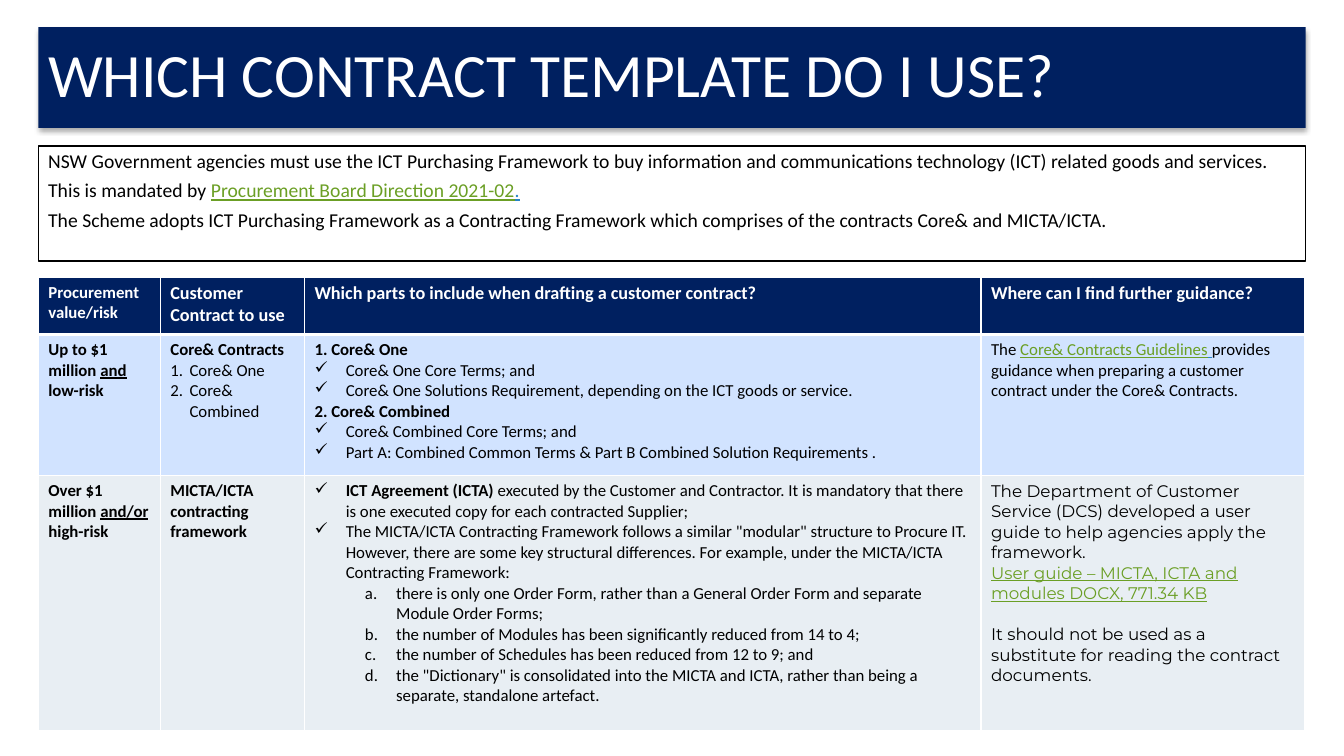
from dataclasses import dataclass

from lxml.etree import SubElement
from pptx import Presentation
from pptx.dml.color import RGBColor
from pptx.enum.shapes import MSO_SHAPE
from pptx.enum.text import MSO_ANCHOR, PP_ALIGN
from pptx.oxml.ns import qn
from pptx.util import Inches, Pt

NAVY = RGBColor(0x00, 0x20, 0x60)
WHITE = RGBColor(0xFF, 0xFF, 0xFF)
BLACK = RGBColor(0x00, 0x00, 0x00)
GREEN = RGBColor(0x6B, 0x9F, 0x25)
BLUE = RGBColor(0x26, 0x83, 0xC6)
PALE_BLUE = RGBColor(0xD1, 0xE3, 0xFF)
PALE_GREY = RGBColor(0xE8, 0xEE, 0xF3)

LINK = dict(color=GREEN, underline=True)


@dataclass
class Line:
    runs: list
    bullet: tuple = ()
    left: float = 0
    hanging: float = 0
    before: float = 0


def plain(text, **style):
    return Line([(text, style)])


def check(*runs):
    return Line(list(runs), ("a:buChar", "char", "✓"), 0.31, 0.31)


def numbered(text):
    return Line([(text, {})], ("a:buAutoNum", "type", "arabicPeriod"), 0.19, 0.19)


def lettered(text):
    return Line([(text, {})], ("a:buAutoNum", "type", "alphaLcPeriod"), 0.81, 0.31)


def write(paragraph, text, size=12, color=BLACK, font="Calibri", bold=False, underline=False):
    run = paragraph.add_run()
    run.text = text
    run.font.name = font
    run.font.size = Pt(size)
    run.font.bold = bold
    run.font.underline = underline
    run.font.color.rgb = color


class ContractSlide:
    def __init__(self, deck):
        self.slide = deck.slides.add_slide(deck.slide_layouts[6])
        self.left = Inches(0.38)
        self.width = Inches(12.57)

    def fill_text(self, frame, lines, spacing=1.0, **base):
        frame.word_wrap = True
        for index, line in enumerate(lines):
            paragraph = frame.add_paragraph() if index else frame.paragraphs[0]
            paragraph.alignment = PP_ALIGN.LEFT
            paragraph.line_spacing = spacing
            paragraph.space_before = Pt(line.before)
            if line.bullet:
                tag, attribute, value = line.bullet
                properties = paragraph._p.get_or_add_pPr()
                properties.set("marL", str(Inches(line.left)))
                properties.set("indent", str(-Inches(line.hanging)))
                SubElement(properties, qn(tag)).set(attribute, value)
            for text, style in line.runs:
                write(paragraph, text, **{**base, **style})

    def panel(self, top, height, fill, lines, outline=None, anchor=MSO_ANCHOR.TOP, **base):
        box = self.slide.shapes.add_shape(
            MSO_SHAPE.RECTANGLE, self.left, Inches(top), self.width, Inches(height))
        box.shadow.inherit = False
        box.fill.solid()
        box.fill.fore_color.rgb = fill
        if outline is None:
            box.line.fill.background()
        else:
            box.line.color.rgb = outline
            box.line.width = Pt(1)
        box.text_frame.vertical_anchor = anchor
        self.fill_text(box.text_frame, lines, spacing=0.9, **base)
        return box

    def drop_shadow(self, box):
        effects = box._element.spPr.find(qn("a:effectLst"))
        shadow = SubElement(effects, qn("a:outerShdw"), blurRad=str(Pt(3.5)),
                            dist=str(Pt(2.2)), dir="5400000", algn="t", rotWithShape="0")
        color = SubElement(shadow, qn("a:srgbClr"), val=str(BLACK))
        SubElement(color, qn("a:alpha"), val="32000")

    def border(self, cell, side, points):
        edge = SubElement(cell._tc.get_or_add_tcPr(), qn(f"a:ln{side}"), w=str(Pt(points)))
        paint = SubElement(edge, qn("a:solidFill"))
        SubElement(paint, qn("a:srgbClr"), val=str(WHITE))

    def table(self, top, widths, heights, fills, rows):
        grid = self.slide.shapes.add_table(
            len(heights), len(widths), self.left, Inches(top),
            self.width, Inches(sum(heights))).table
        grid.horz_banding = False
        for column, width in zip(grid.columns, widths):
            column.width = Inches(width)
        for row, height in zip(grid.rows, heights):
            row.height = Inches(height)
        for row_index, (fill, row) in enumerate(zip(fills, rows)):
            for column_index, lines in enumerate(row):
                cell = grid.cell(row_index, column_index)
                for side in "LRTB":
                    under_header = (row_index, side) in ((0, "B"), (1, "T"))
                    self.border(cell, side, 3 if under_header else 1)
                cell.fill.solid()
                cell.fill.fore_color.rgb = fill
                self.fill_text(cell.text_frame, lines)


def main():
    deck = Presentation()
    deck.slide_width = Inches(13.33)
    deck.slide_height = Inches(7.5)
    page = ContractSlide(deck)

    title = page.panel(0.27, 1, NAVY, [plain("WHICH CONTRACT TEMPLATE DO I USE?")],
                       anchor=MSO_ANCHOR.MIDDLE, size=44, color=WHITE)
    page.drop_shadow(title)

    page.panel(1.45, 1.14, WHITE, [
        plain("NSW Government agencies must use the ICT Purchasing Framework to buy information "
              "and communications technology (ICT) related goods and services."),
        Line([("This is mandated by ", {}),
              ("Procurement Board Direction 2021-02", LINK),
              (".", dict(color=BLUE, underline=True))], before=6),
        Line([("The Scheme adopts ICT Purchasing Framework as a Contracting Framework which "
               "comprises of the contracts Core& and MICTA/ICTA.", {})], before=6),
    ], outline=BLACK, size=14)

    bold = dict(bold=True)
    bold_underlined = dict(bold=True, underline=True)
    heading = dict(size=13, color=WHITE, bold=True)
    montserrat = dict(font="Montserrat")

    headings = [
        [plain("Procurement value/risk", **{**heading, "size": 12})],
        [plain("Customer Contract to use", **heading)],
        [plain("Which parts to include when drafting a customer contract?", **heading)],
        [plain("Where can I find further guidance?", **heading)],
    ]
    low_risk = [
        [Line([("Up to $1 million ", bold), ("and", bold_underlined), (" low-risk", bold)])],
        [plain("Core& Contracts", **bold), numbered("Core& One"), numbered("Core& Combined")],
        [
            plain("1. Core& One", **bold),
            check(("Core& One Core Terms; and", {})),
            check(("Core& One Solutions Requirement, depending on the ICT goods or service.", {})),
            plain("2. Core& Combined", **bold),
            check(("Core& Combined Core Terms; and", {})),
            check(("Part A: Combined Common Terms & Part B Combined Solution Requirements .", {})),
        ],
        [Line([("The ", {}), ("Core& Contracts Guidelines", LINK),
               (" ", dict(color=BLUE, underline=True)),
               ("provides guidance when preparing a customer contract "
                "under the Core& Contracts.", {})])],
    ]
    high_risk = [
        [Line([("Over $1 million ", bold), ("and/or", bold_underlined), (" high-risk", bold)])],
        [plain("MICTA/ICTA contracting framework", **bold)],
        [
            check(("ICT Agreement (ICTA) ", bold),
                  ("executed by the Customer and Contractor. It is mandatory that there is one "
                   "executed copy for each contracted Supplier;", {})),
            check(("The MICTA/ICTA Contracting Framework follows a similar \"modular\" structure "
                   "to Procure IT. However, there are some key structural differences. For "
                   "example, under the MICTA/ICTA Contracting Framework:", {})),
            lettered("there is only one Order Form, rather than a General Order Form and "
                     "separate Module Order Forms;"),
            lettered("the number of Modules has been significantly reduced from 14 to 4;"),
            lettered("the number of Schedules has been reduced from 12 to 9; and"),
            lettered("the \"Dictionary\" is consolidated into the MICTA and ICTA, rather than "
                     "being a separate, standalone artefact."),
        ],
        [
            plain("The Department of Customer Service (DCS) developed a user guide to help "
                  "agencies apply the framework.", **montserrat),
            plain("User guide – MICTA, ICTA and modules DOCX, 771.34 KB", **montserrat, **LINK),
            Line([("It should not be used as a substitute for reading the contract documents.",
                   montserrat)], before=14.6),
        ],
    ]
    page.table(2.75, [1.21, 1.43, 6.71, 3.21], [0.57, 1.4, 2.53],
               [NAVY, PALE_BLUE, PALE_GREY], [headings, low_risk, high_risk])

    deck.save("out.pptx")


if __name__ == "__main__":
    main()
